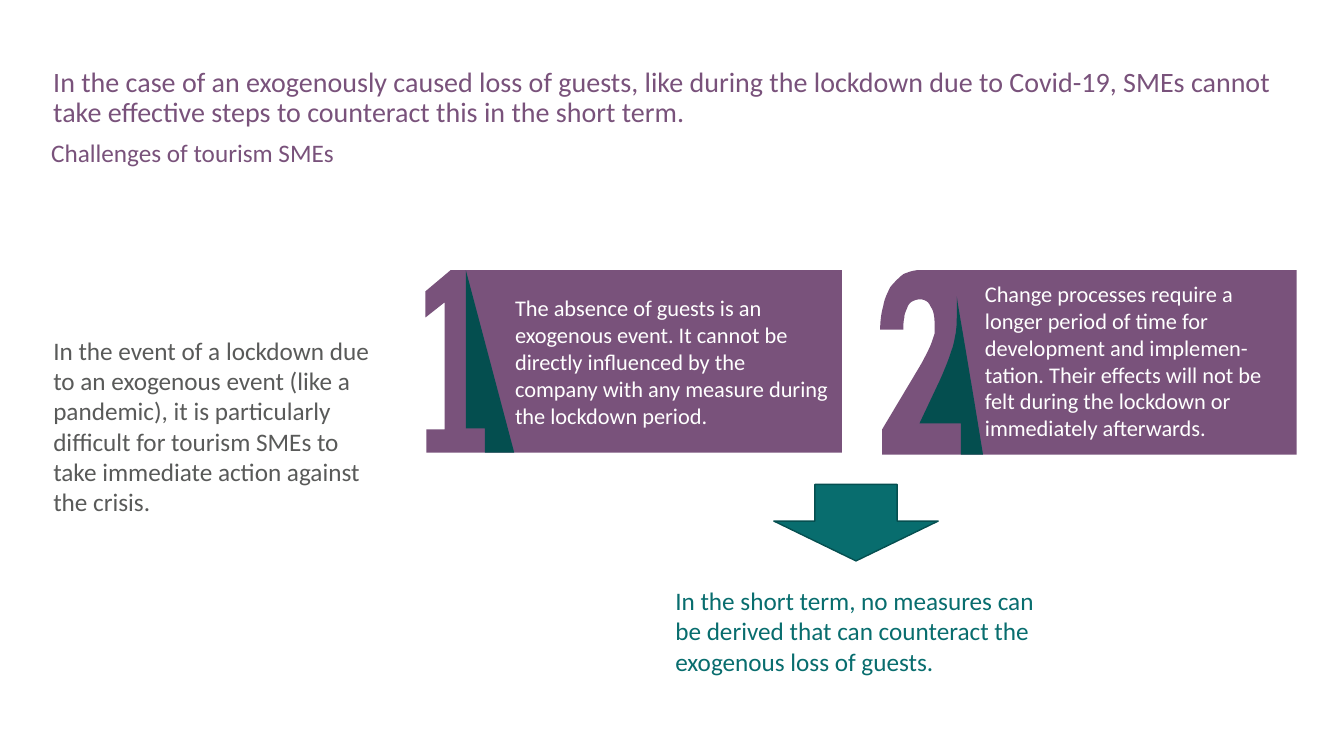
"""Build a slide on the challenges tourism SMEs face during a lockdown."""
from dataclasses import dataclass

from pptx import Presentation
from pptx.dml.color import RGBColor
from pptx.enum.shapes import MSO_SHAPE
from pptx.enum.text import MSO_ANCHOR, PP_ALIGN
from pptx.util import Inches, Pt


@dataclass(frozen=True)
class Theme:
    font: str = "Calibri"
    purple: RGBColor = RGBColor(0x79, 0x52, 0x7B)
    shadow: RGBColor = RGBColor(0x04, 0x4E, 0x4F)
    teal: RGBColor = RGBColor(0x08, 0x6D, 0x6E)
    teal_line: RGBColor = RGBColor(0x05, 0x4F, 0x50)
    grey: RGBColor = RGBColor(0x59, 0x5A, 0x59)
    white: RGBColor = RGBColor(0xFF, 0xFF, 0xFF)
    title: Pt = Pt(20)
    body: Pt = Pt(18)
    card: Pt = Pt(16)


theme = Theme()
presentation = Presentation()
presentation.slide_width = Inches(13.33)
presentation.slide_height = Inches(7.5)
slide = presentation.slides.add_slide(presentation.slide_layouts[6])


def add_text(box, text, size, color, spacing=1.0, anchor=MSO_ANCHOR.TOP):
    """Add a wrapped text box of one paragraph."""
    frame = slide.shapes.add_textbox(*map(Inches, box)).text_frame
    frame.word_wrap = True
    frame.vertical_anchor = anchor
    paragraph = frame.paragraphs[0]
    paragraph.text = text
    paragraph.alignment = PP_ALIGN.LEFT
    paragraph.line_spacing = spacing
    paragraph.font.name = theme.font
    paragraph.font.size = size
    paragraph.font.color.rgb = color


def add_outline(segments, color, steps=6):
    """Fill a closed outline of points (x, y) and cubic curves (two controls, end)."""
    points = []
    for segment in segments:
        if len(segment) == 2:
            points.append(segment)
            continue
        curve = (*points[-1], *segment)
        for step in range(1, steps + 1):
            t = step / steps
            weights = ((1 - t) ** 3, 3 * t * (1 - t) ** 2, 3 * t ** 2 * (1 - t), t ** 3)
            points.append(tuple(sum(weight * value for weight, value in zip(weights, curve[axis::2]))
                                for axis in (0, 1)))
    corners = [(Inches(x), Inches(y)) for x, y in points]
    builder = slide.shapes.build_freeform(*corners[0])
    builder.add_line_segments(corners[1:], close=True)
    shape = builder.convert_to_shape()
    shape.shadow.inherit = False
    shape.fill.solid()
    shape.fill.fore_color.rgb = color
    shape.line.fill.background()


add_text((0.43, 1.79, 3.49, 4.87),
         "In the event of a lockdown due to an exogenous event (like a pandemic), it is particularly "
         "difficult for tourism SMEs to take immediate action against the crisis.",
         theme.body, theme.grey, anchor=MSO_ANCHOR.MIDDLE)
add_text((0.43, 0.63, 12.54, 0.64),
         "In the case of an exogenously caused loss of guests, like during the lockdown due to Covid-19, "
         "SMEs cannot take effective steps to counteract this in the short term.",
         theme.title, theme.purple, spacing=0.9)
add_text((0.41, 1.35, 12.56, 0.28), "Challenges of tourism SMEs",
         theme.body, theme.purple, spacing=0.9)

one_panel = [(4.47, 2.68), (4.22, 2.89), (4.22, 3.15), (4.41, 3), (4.41, 4.26),
             (4.23, 4.26), (4.23, 4.49), (8.35, 4.49), (8.35, 2.68)]
one_shadow = [(5.1, 4.49), (4.62, 2.68), (4.62, 4.25), (4.81, 4.25), (4.81, 4.49)]
two_panel = [
    (9.12, 2.68),
    (9.06, 2.68, 9.01, 2.7, 8.96, 2.72),
    (8.91, 2.76, 8.87, 2.8, 8.83, 2.85),
    (8.8, 2.91, 8.77, 2.97, 8.76, 3.04),
    (8.74, 3.11, 8.73, 3.19, 8.73, 3.27),
    (8.96, 3.27),
    (8.96, 3.23, 8.96, 3.19, 8.97, 3.15),
    (8.97, 3.11, 8.99, 3.08, 9, 3.05),
    (9.01, 3.02, 9.03, 3, 9.05, 2.99),
    (9.07, 2.98, 9.1, 2.97, 9.12, 2.97),
    (9.17, 2.97, 9.21, 2.99, 9.23, 3.04),
    (9.26, 3.08, 9.27, 3.14, 9.27, 3.22),
    (9.27, 3.25, 9.27, 3.28, 9.27, 3.31),
    (9.26, 3.34, 9.25, 3.37, 9.24, 3.4),
    (9.23, 3.43, 9.21, 3.47, 9.19, 3.51),
    (9.17, 3.55, 9.15, 3.59, 9.12, 3.64),
    (8.75, 4.26), (8.75, 4.51), (12.86, 4.51), (12.86, 2.68),
]
two_shadow = [
    (9.75, 4.51),
    (9.56, 3.34, 9.5, 3.03, 9.49, 2.94),
    (9.49, 2.99, 9.49, 3.05, 9.49, 3.11),
    (9.49, 3.17, 9.49, 3.23, 9.48, 3.3),
    (9.47, 3.35, 9.46, 3.42, 9.44, 3.47),
    (9.42, 3.53, 9.4, 3.59, 9.37, 3.66),
    (9.35, 3.71, 9.32, 3.78, 9.29, 3.84),
    (9.12, 4.2), (9.53, 4.2), (9.53, 4.51),
]
cards = [
    (one_panel, one_shadow, (5.01, 2.87, 3.35, 1.45),
     "The absence of guests is an exogenous event. It cannot be directly influenced by the company "
     "with any measure during the lockdown period."),
    (two_panel, two_shadow, (9.67, 2.73, 3.24, 1.72),
     "Change processes require a longer period of time for development and implemen-tation. "
     "Their effects will not be felt during the lockdown or immediately afterwards."),
]
for panel, number_shadow, box, text in cards:
    add_outline(panel, theme.purple)
    add_outline(number_shadow, theme.shadow)
    add_text(box, text, theme.card, theme.white)

arrow = slide.shapes.add_shape(MSO_SHAPE.RIGHT_ARROW, Inches(8.11), Inches(4.37), Inches(0.76), Inches(1.63))
arrow.rotation = 90
arrow.adjustments[0] = 0.5
arrow.adjustments[1] = 0.52
arrow.shadow.inherit = False
arrow.fill.solid()
arrow.fill.fore_color.rgb = theme.teal
arrow.line.color.rgb = theme.teal_line
arrow.line.width = Pt(1)

add_text((6.6, 5.76, 3.77, 1.01),
         "In the short term, no measures can be derived that can counteract the exogenous loss of guests.",
         theme.body, theme.teal)

presentation.save("out.pptx")
